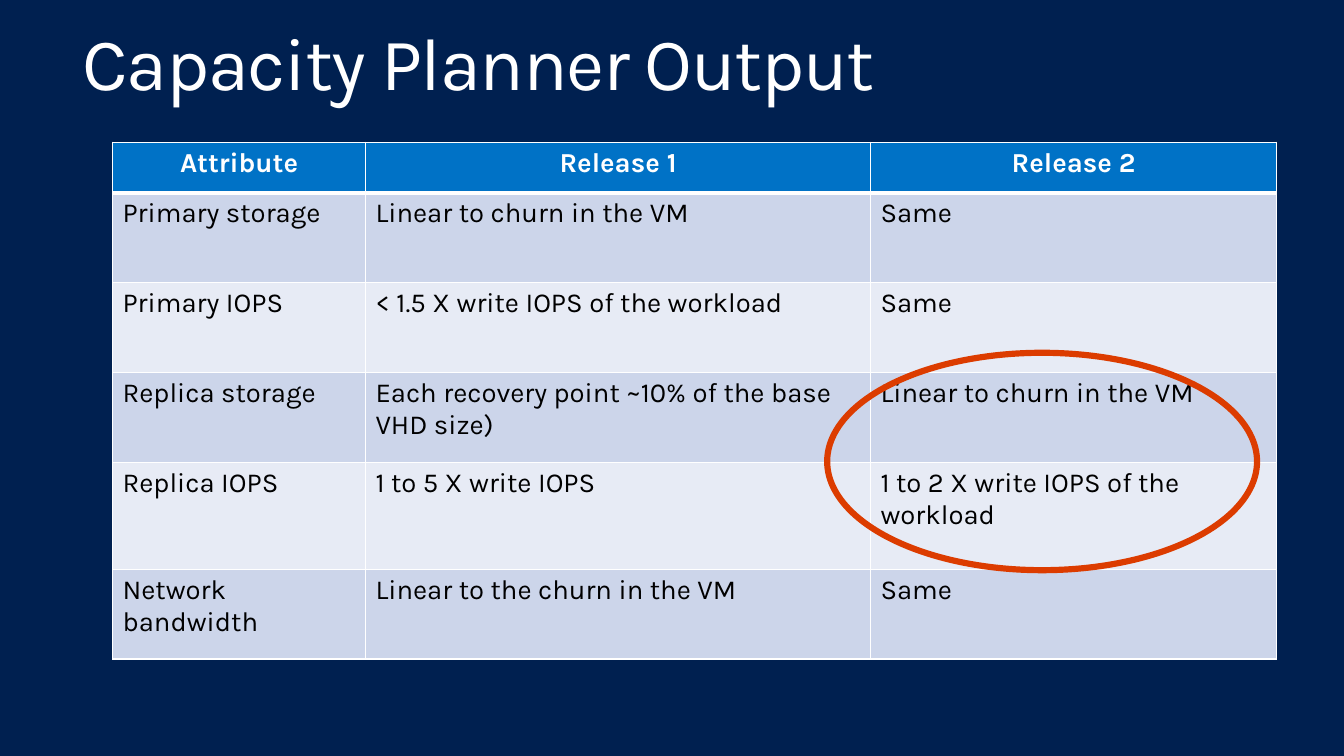
"""Build the Capacity Planner Output slide with its comparison table."""
from dataclasses import dataclass

from lxml import etree
from pptx import Presentation
from pptx.dml.color import RGBColor
from pptx.enum.shapes import MSO_SHAPE
from pptx.enum.text import PP_ALIGN
from pptx.oxml.ns import qn
from pptx.util import Inches, Pt

ELLIPSE = MSO_SHAPE.OVAL
LEFT, CENTER = PP_ALIGN.LEFT, PP_ALIGN.CENTER


@dataclass(frozen=True)
class Theme:
    font: str = "Karla"
    navy: str = "002050"
    blue: str = "0072C6"
    band_dark: str = "CCD5EA"
    band_light: str = "E7EBF5"
    highlight: str = "DC3C00"
    white: str = "FFFFFF"
    black: str = "000000"
    title_size: int = 54
    table_size: int = 20


THEME = Theme()


def write(frame, text, size, color, bold=False, align=LEFT, line_spacing=None, tracking=None):
    frame.word_wrap = True
    paragraph = frame.paragraphs[0]
    paragraph.alignment = align
    paragraph.line_spacing = line_spacing
    run = paragraph.add_run()
    run.text = text
    run.font.name = THEME.font
    run.font.size = Pt(size)
    run.font.bold = bold
    run.font.color.rgb = RGBColor.from_string(color)
    if tracking is not None:
        run.font._element.set("spc", str(tracking * 100))


def set_borders(cell, bottom_width):
    properties = cell._tc.get_or_add_tcPr()
    widths = {"a:lnL": 1, "a:lnR": 1, "a:lnT": 1, "a:lnB": bottom_width}
    for position, (side, width) in enumerate(widths.items()):
        border = etree.Element(qn(side), w=str(Pt(width)))
        fill = etree.SubElement(border, qn("a:solidFill"))
        etree.SubElement(fill, qn("a:srgbClr"), val=THEME.white)
        properties.insert(position, border)


deck = Presentation()
deck.slide_width, deck.slide_height = Inches(13.6), Inches(7.65)
slide = deck.slides.add_slide(deck.slide_layouts[6])
slide.background.fill.solid()
slide.background.fill.fore_color.rgb = RGBColor.from_string(THEME.navy)

title = slide.shapes.add_textbox(Inches(0.68), Inches(0.17), Inches(12.24), Inches(1.27)).text_frame
title.margin_left = title.margin_right = Inches(0.16)
title.margin_top = title.margin_bottom = Inches(0.1)
write(title, "Capacity Planner Output", THEME.title_size, THEME.white, line_spacing=0.9, tracking=-1)

comparison = [
    ("Attribute", "Release 1", "Release 2"),
    ("Primary storage", "Linear to churn in the VM", "Same"),
    ("Primary IOPS", "< 1.5 X write IOPS of the workload", "Same"),
    ("Replica storage", "Each recovery point ~10% of the base VHD size)", "Linear to churn in the VM"),
    ("Replica IOPS", "1 to 5 X write IOPS", "1 to 2 X write IOPS of the workload"),
    ("Network bandwidth", "Linear to the churn in the VM", "Same"),
]
column_widths = [2.56, 5.11, 4.11]
row_heights = [0.51, 0.91, 0.91, 0.91, 1.08, 0.91]

table = slide.shapes.add_table(
    len(comparison), len(column_widths), Inches(1.14), Inches(1.44),
    Inches(sum(column_widths)), Inches(sum(row_heights))).table
for column, width in zip(table.columns, column_widths):
    column.width = Inches(width)
for row, height in zip(table.rows, row_heights):
    row.height = Inches(height)

for row_index, entries in enumerate(comparison):
    header = row_index == 0
    band = THEME.band_dark if row_index % 2 else THEME.band_light
    for column_index, entry in enumerate(entries):
        cell = table.cell(row_index, column_index)
        cell.fill.solid()
        cell.fill.fore_color.rgb = RGBColor.from_string(THEME.blue if header else band)
        set_borders(cell, bottom_width=3 if header else 1)
        write(cell.text_frame, entry, THEME.table_size, THEME.white if header else THEME.black,
              bold=header, align=CENTER if header else LEFT)

replica_highlight = slide.shapes.add_shape(ELLIPSE, Inches(8.37), Inches(3.57), Inches(4.35), Inches(2.2))
replica_highlight.shadow.inherit = False
replica_highlight.fill.background()
replica_highlight.line.color.rgb = RGBColor.from_string(THEME.highlight)
replica_highlight.line.width = Pt(4.5)

deck.save("out.pptx")
